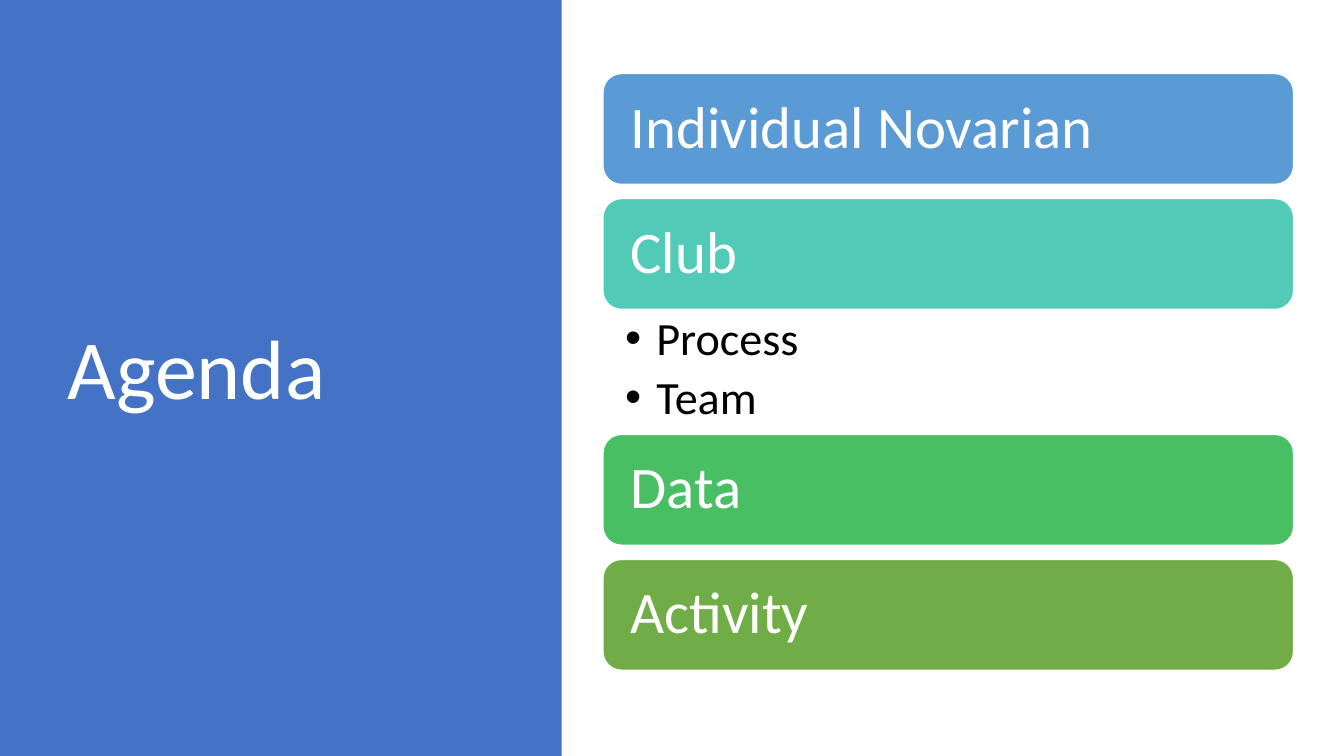
from lxml import etree
from pptx import Presentation
from pptx.dml.color import RGBColor
from pptx.enum.shapes import MSO_SHAPE
from pptx.enum.text import MSO_ANCHOR, MSO_AUTO_SIZE, PP_ALIGN
from pptx.oxml.ns import qn
from pptx.util import Inches, Pt

RECT, ROUND = MSO_SHAPE.RECTANGLE, MSO_SHAPE.ROUNDED_RECTANGLE
MIDDLE, TOP = MSO_ANCHOR.MIDDLE, MSO_ANCHOR.TOP
LEFT = PP_ALIGN.LEFT
NO_FIT = MSO_AUTO_SIZE.NONE

WHITE = RGBColor(0xFF, 0xFF, 0xFF)
BLACK = RGBColor(0, 0, 0)
NAVY = RGBColor(0x44, 0x72, 0xC4)
BLUE = RGBColor(0x5B, 0x9B, 0xD5)
TEAL = RGBColor(0x52, 0xCA, 0xB8)
GREEN = RGBColor(0x49, 0xBF, 0x64)
OLIVE = RGBColor(0x70, 0xAD, 0x47)

BAR_X, BAR_W, BAR_H = 5.98, 6.85, 1.1
LIST_H = 1.24
GAP = 0.14

TOPICS = [
    ("Individual Novarian", BLUE, []),
    ("Club", TEAL, ["Process", "Team"]),
    ("Data", GREEN, []),
    ("Activity", OLIVE, []),
]


class Deck:
    font = "Calibri"

    def __init__(self, prs):
        self.slide = prs.slides.add_slide(prs.slide_layouts[1])
        self.shapes = self.slide.shapes

    def place(self, shape, x, y, w, h):
        shape.left, shape.top = Inches(x), Inches(y)
        shape.width, shape.height = Inches(w), Inches(h)

    def label(self, shape, lines, size, color, anchor, pad, after=0):
        """Fill a shape with paragraphs; pad is left, top, right, bottom."""
        frame = shape.text_frame
        frame.text = "\n".join(lines)
        frame.word_wrap = True
        frame.auto_size = NO_FIT
        frame.vertical_anchor = anchor
        frame.margin_left, frame.margin_top = Inches(pad[0]), Inches(pad[1])
        frame.margin_right, frame.margin_bottom = Inches(pad[2]), Inches(pad[3])
        for para in frame.paragraphs:
            para.alignment = LEFT
            para.line_spacing = 0.9
            para.space_before, para.space_after = Pt(0), Pt(after)
            para.font.name, para.font.size = self.font, Pt(size)
            para.font.color.rgb = color

    def block(self, kind, x, y, w, h, fill):
        shape = self.shapes.add_shape(
            kind, Inches(x), Inches(y), Inches(w), Inches(h))
        shape.shadow.inherit = False
        shape.fill.solid()
        shape.fill.fore_color.rgb = fill
        return shape

    def panel(self, x, y, w, h, fill):
        """Draw a plain block behind everything else."""
        shape = self.block(RECT, x, y, w, h, fill)
        shape.line.fill.background()
        tree = shape.element.getparent()
        tree.insert(2, shape.element)

    def title(self, text, x, y, w, h):
        shape = self.shapes.title
        self.place(shape, x, y, w, h)
        self.label(shape, [text], 60, WHITE, MIDDLE, (0.1, 0.05, 0.1, 0.05))

    def bar(self, text, y, fill):
        shape = self.block(ROUND, BAR_X, y, BAR_W, BAR_H, fill)
        shape.line.color.rgb = WHITE
        shape.line.width = Pt(1)
        self.label(shape, [text], 42, WHITE, MIDDLE, (0.22,) * 4)

    def list(self, items, y):
        shape = self.slide.placeholders[1]
        self.place(shape, BAR_X, y, BAR_W, LIST_H)
        self.label(shape, items, 33, BLACK, TOP, (0.22, 0.06, 0.33, 0.06), 6.6)
        for para in shape.text_frame.paragraphs:
            props = para._p.get_or_add_pPr()
            props.set("marL", str(Inches(0.31)))
            props.set("indent", str(Inches(-0.31)))
            mark = etree.Element(qn("a:buChar"), char="•")
            props.find(qn("a:spcAft")).addnext(mark)


def main():
    prs = Presentation()
    prs.slide_width, prs.slide_height = Inches(13.33), Inches(7.5)
    deck = Deck(prs)
    deck.panel(0, 0, 5.57, 7.5, NAVY)
    deck.title("Agenda", 0.57, 0.68, 4.16, 6.02)
    y = 0.73
    for name, fill, items in TOPICS:
        deck.bar(name, y, fill)
        y += BAR_H
        if items:
            deck.list(items, y)
            y += LIST_H
        else:
            y += GAP
    prs.save("out.pptx")


if __name__ == "__main__":
    main()
